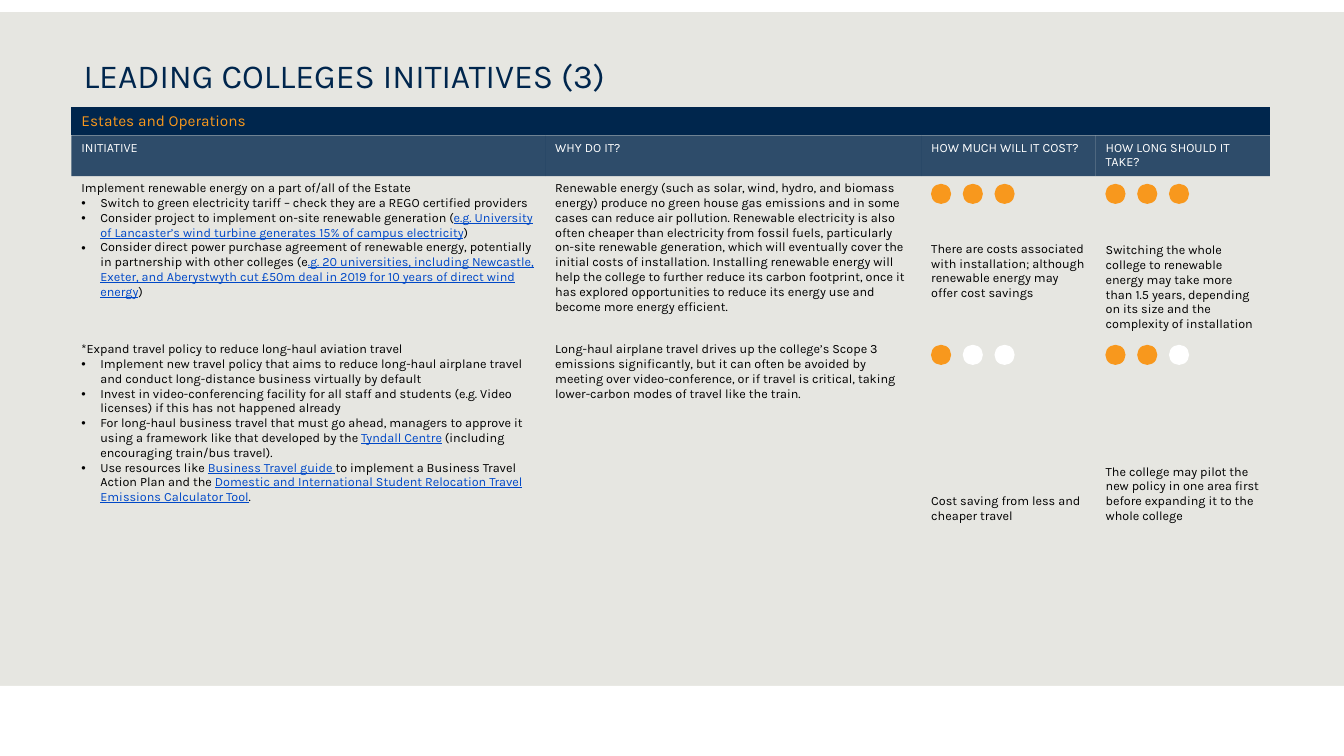
from itertools import accumulate

from lxml import etree
from pptx import Presentation
from pptx.dml.color import RGBColor
from pptx.enum import shapes, text
from pptx.oxml import ns
from pptx.util import Pt

NAVY, ORANGE, WHITE, STONE = "00264D", "F8981D", "FFFFFF", "E6E6E1"
BLACK, LINK = "000000", "0048C7"
TOP, MIDDLE, BOTTOM = text.MSO_ANCHOR.TOP, text.MSO_ANCHOR.MIDDLE, text.MSO_ANCHOR.BOTTOM
COLS = [338.4, 268.6, 124.6, 124.6]
ROWS = [20, 29, 115, 137]
HEADINGS = ["INITIATIVE", "WHY DO IT?", "HOW MUCH WILL IT COST?", "HOW LONG SHOULD IT TAKE?"]
INITIATIVES = [
    {
        "what": [
            "Implement renewable energy on a part of/all of the Estate",
            "Switch to green electricity tariff – check they are a REGO certified providers",
            "Consider project to implement on-site renewable generation (|e.g. University of "
            "Lancaster’s wind turbine generates 15% of campus electricity|)",
            "Consider direct power purchase agreement of renewable energy, potentially in "
            "partnership with other colleges (e|.g. 20 universities, including Newcastle, Exeter, "
            "and Aberystwyth cut £50m deal in 2019 for 10 years of direct wind energy|)",
        ],
        "why": "Renewable energy (such as solar, wind, hydro, and biomass energy) produce no green "
               "house gas emissions and in some cases can reduce air pollution. Renewable electricity "
               "is also often cheaper than electricity from fossil fuels, particularly on-site "
               "renewable generation, which will eventually cover the initial costs of installation. "
               "Installing renewable energy will help the college to further reduce its carbon "
               "footprint, once it has explored opportunities to reduce its energy use and become "
               "more energy efficient.",
        "cost": "There are costs associated with installation; although renewable energy may offer "
                "cost savings",
        "time": "Switching the whole college to renewable energy may take more than 1.5 years, "
                "depending on its size and the complexity of installation",
        "cost_format": {"anchor": MIDDLE, "top": 24.8},
        "scores": (3, 3),
    },
    {
        "what": [
            "*Expand travel policy to reduce long-haul aviation travel",
            "Implement new travel policy that aims to reduce long-haul airplane travel and conduct "
            "long-distance business virtually by default",
            "Invest in video-conferencing facility for all staff and students (e.g. Video licenses) "
            "if this has not happened already",
            "For long-haul business travel that must go ahead, managers to approve it using a "
            "framework like that developed by the |Tyndall Centre| (including encouraging train/bus "
            "travel).",
            "Use resources like |Business Travel guide |to implement a Business Travel Action Plan "
            "and the |Domestic and International Student Relocation Travel Emissions Calculator "
            "Tool|.",
        ],
        "why": "Long-haul airplane travel drives up the college’s Scope 3 emissions significantly, "
               "but it can often be avoided by meeting over video-conference, or if travel is "
               "critical, taking lower-carbon modes of travel like the train.",
        "cost": "Cost saving from less and cheaper travel",
        "time": "The college may pilot the new policy in one area first before expanding it to the "
                "whole college",
        "cost_format": {"anchor": BOTTOM},
        "scores": (1, 2),
    },
]


def rgb(value):
    """Turn a hex string into a colour."""
    return RGBColor.from_string(value)


def write(p, content, size=9, color=BLACK, bullet=False):
    """Write a paragraph in which every second part between bars is a link."""
    if bullet:
        pPr = p._p.get_or_add_pPr()
        pPr.set("marL", str(Pt(13.5)))
        pPr.set("indent", str(-Pt(13.5)))
        etree.SubElement(pPr, ns.qn("a:buFont")).set("typeface", "Arial")
        etree.SubElement(pPr, ns.qn("a:buChar")).set("char", "•")
    for i, part in enumerate(content.split("|")):
        linked = i % 2 == 1
        r = p.add_run()
        r.text = part
        r.font.name, r.font.size = "Karla", Pt(size)
        r.font.color.rgb = rgb(LINK if linked else color)
        if linked:
            r.font.underline = True


def shape(s, kind, x, y, w, h, fill):
    """Add a plain filled shape."""
    sp = s.shapes.add_shape(kind, Pt(x), Pt(y), Pt(w), Pt(h))
    sp.shadow.inherit = False
    sp.fill.solid()
    sp.fill.fore_color.rgb = rgb(fill)
    sp.line.fill.background()


def title(s, x, y, w, h, content):
    """Add the slide title."""
    tf = s.shapes.add_textbox(Pt(x), Pt(y), Pt(w), Pt(h)).text_frame
    tf.word_wrap = True
    tf.margin_top = Pt(5.5)
    write(tf.paragraphs[0], content, size=24, color=NAVY)


def fill_cell(cell, lines, fill=None, alpha=100, anchor=TOP, top=3.6, **fmt):
    """Fill a cell with a lead line and bullets below it."""
    cell.vertical_anchor = anchor
    cell.margin_top = Pt(top)
    if fill:
        cell.fill.solid()
        cell.fill.fore_color.rgb = rgb(fill)
        if alpha < 100:
            clr = cell._tc.tcPr.find(".//" + ns.qn("a:srgbClr"))
            etree.SubElement(clr, ns.qn("a:alpha")).set("val", str(alpha * 1000))
    else:
        cell.fill.background()
    for i, line in enumerate(lines):
        p = cell.text_frame.add_paragraph() if i else cell.text_frame.paragraphs[0]
        write(p, line, bullet=i > 0, **fmt)


def rating(s, x, y, score):
    """Draw three dots, the first ones lit up to the score."""
    for i in range(3):
        shape(s, shapes.MSO_SHAPE.OVAL, x + 22.7 * i, y, 14.4, 14.4, ORANGE if i < score else WHITE)


def initiatives(s, x, y):
    """Add the initiatives table with its ratings."""
    frame = s.shapes.add_table(len(ROWS), len(COLS), Pt(x), Pt(y), Pt(sum(COLS)), Pt(sum(ROWS)))
    table = frame.table
    table._tbl.tblPr.find(ns.qn("a:tableStyleId")).text = "{2D5ABB26-0587-4C30-8999-92F81FD0307C}"
    for col, w in zip(table.columns, COLS):
        col.width = Pt(w)
    for row, h in zip(table.rows, ROWS):
        row.height = Pt(h)
    table.cell(0, 0).merge(table.cell(0, 3))
    fill_cell(table.cell(0, 0), ["Estates and Operations"], fill=NAVY, size=11, color=ORANGE)
    for c, heading in enumerate(HEADINGS):
        fill_cell(table.cell(1, c), [heading], fill=NAVY, alpha=80, color=WHITE)
    lefts = list(accumulate(COLS, initial=x))
    tops = list(accumulate(ROWS, initial=y))
    for n, item in enumerate(INITIATIVES, 2):
        fill_cell(table.cell(n, 0), item["what"])
        fill_cell(table.cell(n, 1), [item["why"]])
        fill_cell(table.cell(n, 2), [item["cost"]], **item["cost_format"])
        fill_cell(table.cell(n, 3), [item["time"]], anchor=BOTTOM)
        for c, score in enumerate(item["scores"], 2):
            rating(s, lefts[c] + 7, tops[n] + 6, score)


def main():
    """Build and save the slide."""
    prs = Presentation()
    prs.slide_width, prs.slide_height = Pt(960), Pt(540)
    s = prs.slides.add_slide(prs.slide_layouts[6])
    shape(s, shapes.MSO_SHAPE.RECTANGLE, 0, 8.6, 960, 507.6, STONE)
    title(s, 52.6, 34, 854.6, 41, "LEADING COLLEGES INITIATIVES (3)")
    shape(s, shapes.MSO_SHAPE.RECTANGLE, 0, 490, 960, 50, WHITE)
    initiatives(s, 51, 76.3)
    prs.save("out.pptx")


if __name__ == "__main__":
    main()
